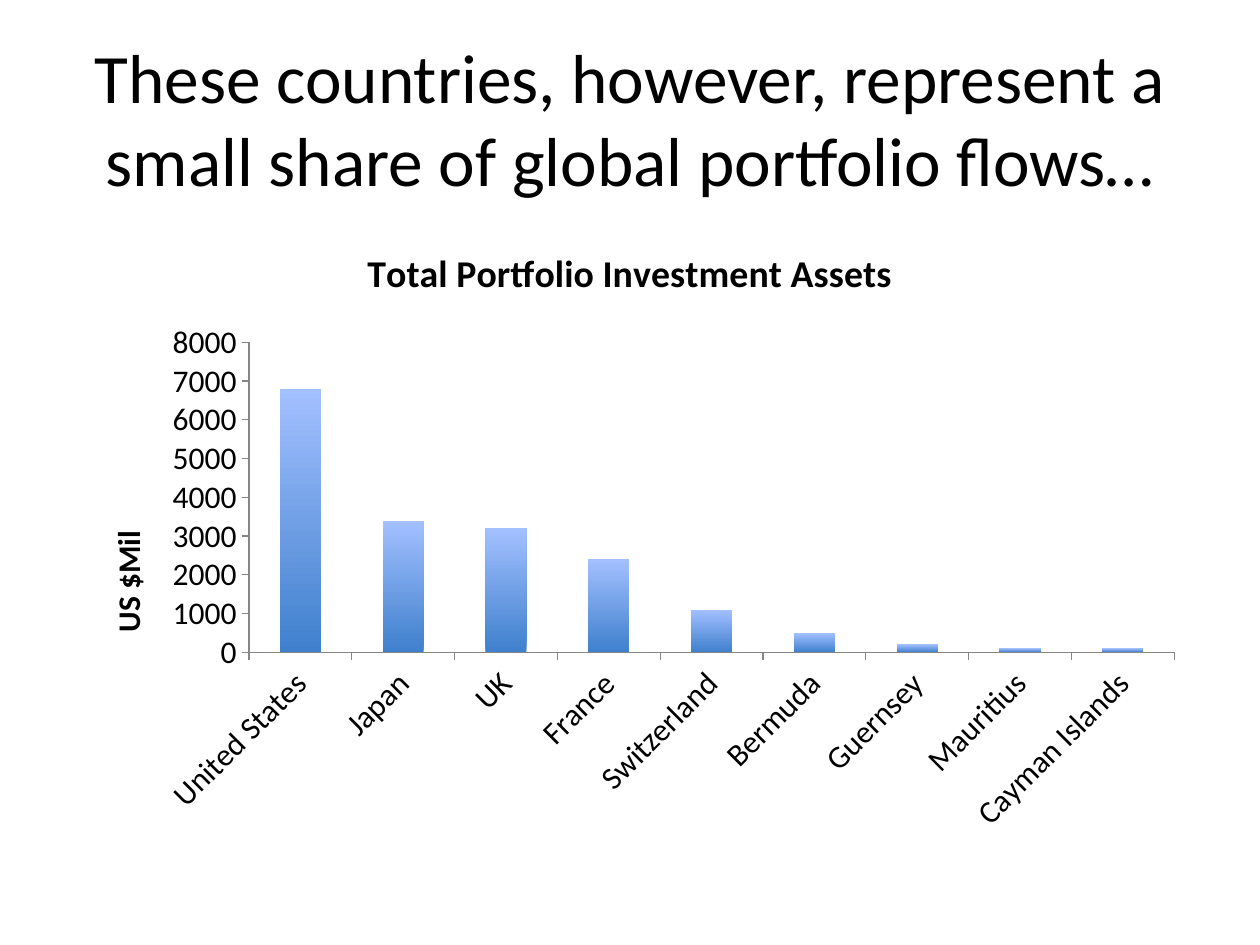
from pptx import Presentation, util as u
from pptx.chart.data import CategoryChartData
from pptx.dml.color import RGBColor
from pptx.enum import chart as ch, text
from pptx.oxml import parse_xml
from pptx.oxml.ns import nsdecls

PX = 914400 / 126
BLACK = RGBColor(0, 0, 0)
AXIS_GRAY = RGBColor(0x86, 0x86, 0x86)
BAR_BOTTOM = RGBColor(0x3F, 0x80, 0xCD)
BAR_TOP = RGBColor(0xA3, 0xC0, 0xFF)
FONT = "Calibri"
CHART_BOX = (63, 220, 1134, 624)
PLOT_BOX = (249, 342, 925, 310)
ASSETS = {
    "United States": 6800, "Japan": 3400, "UK": 3200, "France": 2400,
    "Switzerland": 1100, "Bermuda": 500, "Guernsey": 200, "Mauritius": 100,
    "Cayman Islands": 100,
}


def px(n):
    return u.Emu(round(n * PX))


def style(font, size, bold=False):
    font.name, font.size, font.bold = FONT, u.Pt(size), bold
    font.color.rgb = BLACK


def add_title(s, wording):
    sp = s.shapes.title
    sp.left, sp.top, sp.width, sp.height = map(px, (63, 38, 1134, 158))
    tf = sp.text_frame
    tf.text = wording
    tf.word_wrap = True
    tf.auto_size = text.MSO_AUTO_SIZE.NONE
    tf.vertical_anchor = text.MSO_ANCHOR.MIDDLE
    p = tf.paragraphs[0]
    p.alignment = text.PP_ALIGN.CENTER
    style(p.runs[0].font, 39.6)


def layout(x, y, w=None, h=None):
    """Manual chart layout for slide pixels; with a size it is an inner plot area."""
    left, top, width, height = CHART_BOX
    parts = [("xMode", "edge"), ("yMode", "edge"),
             ("x", round((x - left) / width, 3)), ("y", round((y - top) / height, 3))]
    if w:
        parts.insert(0, ("layoutTarget", "inner"))
        parts += [("w", round(w / width, 3)), ("h", round(h / height, 3))]
    body = "".join(f'<c:{tag} val="{val}"/>' for tag, val in parts)
    return parse_xml(f'<c:layout {nsdecls("c")}><c:manualLayout>{body}'
                     '</c:manualLayout></c:layout>')


def set_layout(parent, new, index):
    for old in parent.findall(new.tag):
        parent.remove(old)
    parent.insert(index, new)


def set_heading(title, wording, size):
    title.text_frame.text = wording
    style(title.text_frame.paragraphs[0].runs[0].font, size, bold=True)


def format_axis(axis):
    axis.has_major_gridlines = False
    axis.major_tick_mark = ch.XL_TICK_MARK.OUTSIDE
    axis.minor_tick_mark = ch.XL_TICK_MARK.NONE
    axis.format.line.color.rgb = AXIS_GRAY
    axis.format.line.width = u.Pt(0.75)
    style(axis.tick_labels.font, 18)


def add_assets_chart(s):
    data = CategoryChartData()
    data.categories = list(ASSETS)
    data.add_series("Series 1", list(ASSETS.values()))
    chart = s.shapes.add_chart(ch.XL_CHART_TYPE.COLUMN_CLUSTERED,
                               *map(px, CHART_BOX), data).chart
    style(chart.font, 18)
    chart.has_legend = False
    chart.has_title = True
    set_heading(chart.chart_title, "Total Portfolio Investment Assets", 21.6)
    chart.chart_title.include_in_layout = False

    cats, vals = chart.category_axis, chart.value_axis
    for axis in (cats, vals):
        format_axis(axis)
    cats.tick_labels.font._element.getparent().getparent().getparent().find(
        "{*}bodyPr").set("rot", "-2700000")
    vals.minimum_scale, vals.maximum_scale, vals.major_unit = 0, 8000, 1000
    vals.tick_labels.number_format = "General"
    vals.tick_labels.number_format_is_linked = False
    vals.has_title = True
    set_heading(vals.axis_title, "US $Mil", 18)
    vals.axis_title.text_frame._txBody.find("{*}bodyPr").set("rot", "-5400000")
    set_layout(vals.axis_title._element, layout(100, 525), 1)

    plot = chart.plots[0]
    plot.gap_width = 150
    plot.vary_by_categories = False
    fill = plot.series[0].format.fill
    fill.gradient()
    fill.gradient_angle = 90
    for stop, color, position in zip(fill.gradient_stops, (BAR_BOTTOM, BAR_TOP), (0, 1)):
        stop.color.rgb = color
        stop.position = position
    set_layout(chart._chartSpace.chart.plotArea, layout(*PLOT_BOX), 0)


def main():
    prs = Presentation()
    prs.slide_width, prs.slide_height = px(1260), px(945)
    s = prs.slides.add_slide(prs.slide_layouts[5])
    add_title(s, "These countries, however, represent a small share of "
                 "global portfolio flows…")
    add_assets_chart(s)
    prs.save("out.pptx")


if __name__ == "__main__":
    main()
